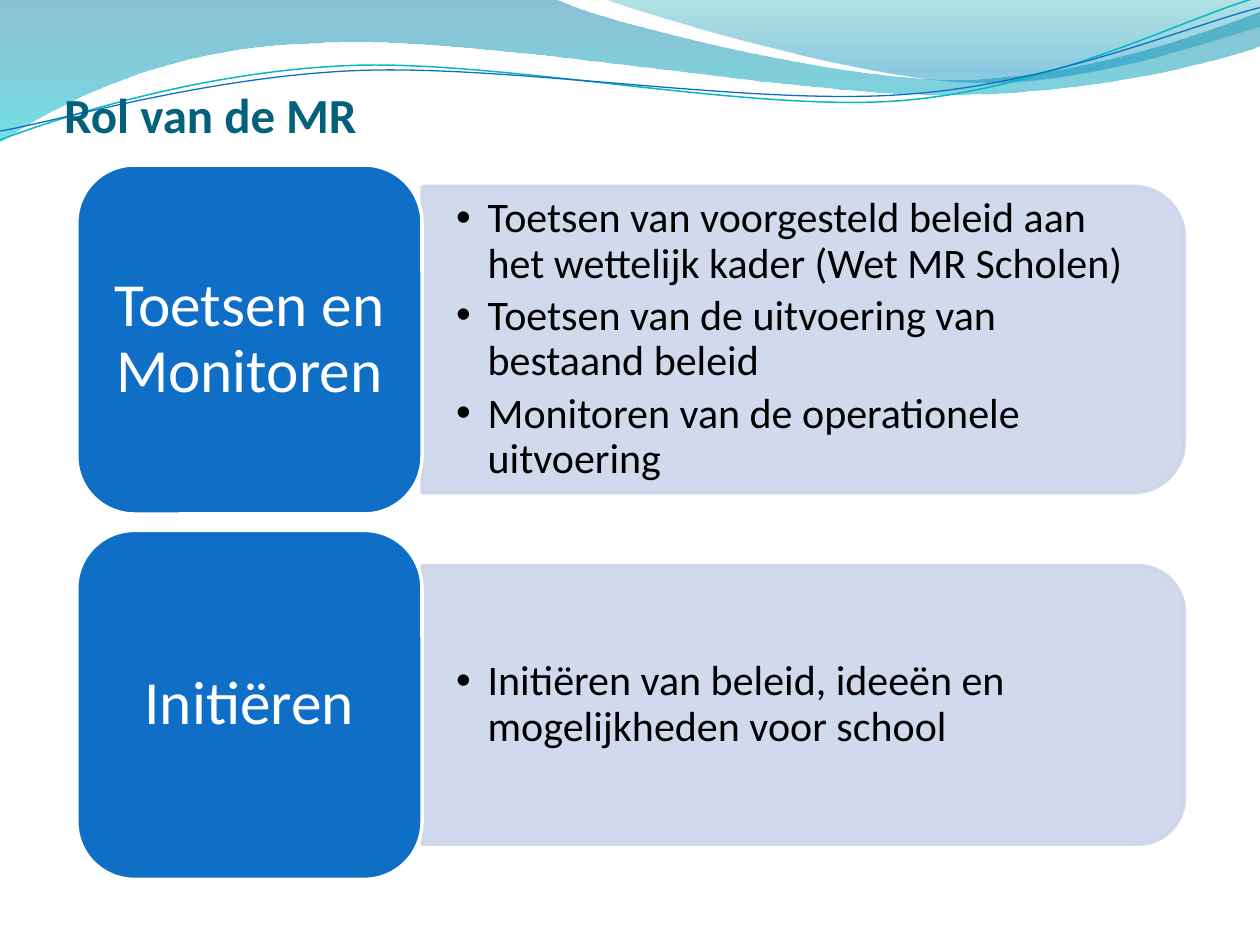
import math

from lxml import etree
from pptx import Presentation
from pptx import util as u
from pptx.dml.color import RGBColor
from pptx.enum import shapes, text
from pptx.oxml.ns import qn

Inches, Pt = u.Inches, u.Pt
rgb = RGBColor.from_string


def set_opacity(shape, *percents):
    colours = shape._element.iter(qn("a:srgbClr"))
    for colour, percent in zip(colours, percents):
        etree.SubElement(colour, qn("a:alpha")).set("val", str(percent * 1000))


def add_curve(start, segments, closed):
    """Draw lines (1 point) and Bezier curves (3 points) as one freeform."""
    points = [point for segment in segments for point in segment]
    builder = slide.shapes.build_freeform(Inches(start[0]), Inches(start[1]))
    builder.add_line_segments([(Inches(x), Inches(y)) for x, y in points], close=closed)
    curve = builder.convert_to_shape()
    curve.shadow.inherit = False
    parts = iter(list(curve._element.iter(qn("a:lnTo"))))
    for segment in segments:
        first, *others = [next(parts) for _ in segment]
        if others:
            first.tag = qn("a:cubicBezTo")
        for other in others:
            first.append(other[0])
            other.getparent().remove(other)
    return curve


prs = Presentation()
prs.slide_width, prs.slide_height = Inches(10), Inches(7.5)
slide = prs.slides.add_slide(prs.slide_layouts[3])
title, *lists = slide.placeholders

# Gradient waves along the top: start, segments, (colour, position, opacity) per stop
waves = [
    ((0, 0),
     [[(4.4, -0.01)],
      [(4.76, 0.17), (6.64, 0.63), (7.58, 0.63)], [(8.53, 0.63), (9.58, 0.26), (10, 0.09)],
      [(10.01, 0.36)],
      [(9.83, 0.44), (8.7, 0.76), (7.46, 0.75)], [(6.22, 0.75), (3.82, 0.28), (2.57, 0.34)],
      [(1.29, 0.36), (0.46, 0.83), (-0.01, 1.13)]],
     [("0074A1", 0, 45), ("00C6CF", 1, 55)]),
    ((4.79, -0.01),
     [[(5.09, 0.11), (6.82, 0.62), (7.69, 0.65)], [(8.56, 0.69), (9.61, 0.32), (10, 0.21)],
      [(10, 0)]],
     [("00A1A9", 0, 30), ("008BBF", 0.8, 45)]),
]
for start, segments, stops in waves:
    wave = add_curve(start, segments, True)
    wave.line.fill.background()
    wave.fill.gradient()
    wave.fill.gradient_angle = 270
    for stop, (colour, position, _) in zip(wave.fill.gradient_stops, stops):
        stop.color.rgb = rgb(colour)
        stop.position = position
    set_opacity(wave, *[opacity for _, _, opacity in stops])

# Thin wave lines, laid out level around a pivot and then tilted
tilt = 2.7
cos, sin = math.cos(math.radians(tilt)), math.sin(math.radians(tilt))
pivot_x, pivot_y = 4.99, 0.58
wave_lines = [
    ([(0, 1.11), (0.48, 0.93), (1.58, 0.57), (2.77, 0.52), (3.95, 0.47), (5.93, 0.89),
      (7.13, 0.8), (8.33, 0.71), (9.38, 0.15), (9.98, -0.02)], "0AB8BF", 0.85),
    ([(0, 1.04), (0.47, 0.96), (1.64, 0.61), (2.83, 0.56), (4.03, 0.51), (5.97, 0.84),
      (7.17, 0.75), (8.36, 0.67), (9.41, 0.21), (10, 0.06)], "0F6FC6", 0.75),
]
for points, colour, width in wave_lines:
    level = [(pivot_x + (x - pivot_x) * cos - (y - pivot_y) * sin,
              pivot_y + (x - pivot_x) * sin + (y - pivot_y) * cos) for x, y in points]
    wave_line = add_curve(level[0], [level[i:i + 3] for i in (1, 4, 7)], False)
    wave_line.rotation = 360 - tilt
    wave_line.fill.background()
    wave_line.line.color.rgb = rgb(colour)
    wave_line.line.width = Pt(width)

# Title, in front of the waves
slide.shapes._spTree.append(title._element)
title.left, title.top, title.width, title.height = [Inches(n) for n in (0.51, 0.52, 9, 0.62)]
heading = title.text_frame
heading.text = "Rol van de MR"
heading.auto_size = text.MSO_AUTO_SIZE.NONE
heading.vertical_anchor = text.MSO_ANCHOR.BOTTOM
heading.margin_left = heading.margin_right = heading.margin_bottom = 0
heading.paragraphs[0].alignment = text.PP_ALIGN.LEFT
font = heading.paragraphs[0].runs[0].font
font.name, font.size, font.bold = "Calibri", Pt(28), True
font.color.rgb = rgb("04617B")

# Role rows: label, block top, panel height, list height, list items
roles = [
    ("Toetsen en Monitoren", 1.31, 2.43, 2.19,
     ["Toetsen van voorgesteld beleid aan het wettelijk kader (Wet MR Scholen)",
      "Toetsen van de uitvoering van bestaand beleid",
      "Monitoren van de operationele uitvoering"]),
    ("Initiëren", 4.21, 2.21, 2,
     ["Initiëren van beleid, ideeën en mogelijkheden voor school"]),
]
block_left, block_width, block_height, panel_length = 0.61, 2.74, 2.77, 6.05
panel_left = block_left + block_width
for (label, top, panel_height, list_height, items), duties in zip(roles, lists):
    middle = top + block_height / 2

    # Panel: an upright shape turned so that its round corners face right
    panel = slide.shapes.add_shape(
        shapes.MSO_SHAPE.ROUND_2_SAME_RECTANGLE,
        Inches(panel_left + (panel_length - panel_height) / 2),
        Inches(middle - panel_length / 2), Inches(panel_height), Inches(panel_length))
    panel.rotation = 90
    panel.shadow.inherit = False
    panel.fill.solid()
    panel.fill.fore_color.rgb = panel.line.color.rgb = rgb("CCD5EA")
    panel.line.width = Pt(2)
    set_opacity(panel, 90, 90)

    # Bulleted list on the panel
    slide.shapes._spTree.append(duties._element)
    duties.left, duties.width = Inches(panel_left), Inches(5.93)
    duties.top, duties.height = Inches(middle - list_height / 2), Inches(list_height)
    frame = duties.text_frame
    frame.text = "\n".join(items)
    frame.auto_size = text.MSO_AUTO_SIZE.NONE
    frame.vertical_anchor = text.MSO_ANCHOR.MIDDLE
    frame.margin_left = frame.margin_right = Inches(0.27)
    frame.margin_top = frame.margin_bottom = Inches(0.14)
    for item in frame.paragraphs:
        item.line_spacing, item.space_before, item.space_after = 0.9, Pt(0), Pt(4)
        indent = item._p.get_or_add_pPr()
        indent.set("marL", str(Inches(0.25)))
        indent.set("indent", str(Inches(-0.25)))
        font = item.runs[0].font
        font.name, font.size = "Calibri", Pt(24)
        font.color.rgb = rgb("000000")

    # Blue block with the role's name
    block = slide.shapes.add_shape(
        shapes.MSO_SHAPE.ROUNDED_RECTANGLE, Inches(block_left), Inches(top),
        Inches(block_width), Inches(block_height))
    block.shadow.inherit = False
    block.fill.solid()
    block.fill.fore_color.rgb = rgb("0F6FC6")
    block.line.color.rgb = rgb("FFFFFF")
    block.line.width = Pt(2)
    frame = block.text_frame
    frame.text = label
    frame.word_wrap = True
    frame.vertical_anchor = text.MSO_ANCHOR.MIDDLE
    frame.margin_left = frame.margin_right = Inches(0.15)
    frame.margin_top = frame.margin_bottom = Inches(0.07)
    name = frame.paragraphs[0]
    name.alignment = text.PP_ALIGN.CENTER
    name.line_spacing = 0.9
    font = name.runs[0].font
    font.name, font.size = "Calibri", Pt(35)
    font.color.rgb = rgb("FFFFFF")

prs.save("out.pptx")
